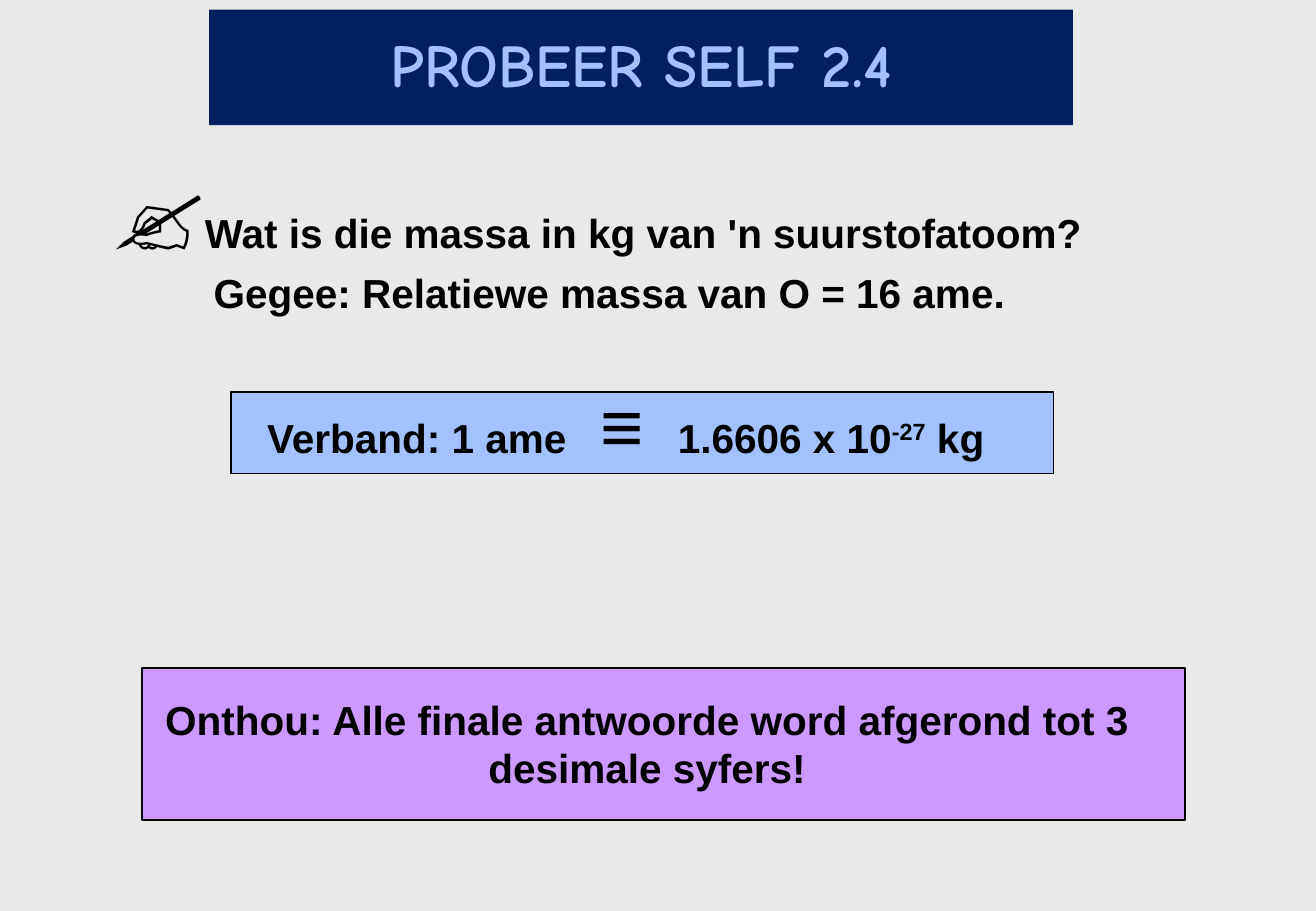
from lxml import etree
from pptx import Presentation
from pptx import util as u
from pptx.dml.color import RGBColor
from pptx.enum import shapes, text
from pptx.oxml import ns

BLACK = RGBColor(0x00, 0x00, 0x00)
PAPER = RGBColor(0xE9, 0xE9, 0xE9)
NAVY = RGBColor(0x00, 0x20, 0x60)
SKY = RGBColor(0xA2, 0xC1, 0xFE)
LILAC = RGBColor(0xCC, 0x99, 0xFF)

BODY = {"name": "Arial", "size": u.Pt(24), "bold": True}
TITLE = {"name": "Comic Neue", "size": u.Pt(36), "bold": True}
HAND = {"name": "Lato", "size": u.Pt(60)}
SIGN = {"size": u.Pt(44)}


class ExerciseSlide:
    def __init__(self, presentation):
        self.slide = presentation.slides.add_slide(presentation.slide_layouts[6])
        fill = self.slide.background.fill
        fill.solid()
        fill.fore_color.rgb = PAPER

    def panel(self, box, color, outlined=True):
        shape = self.slide.shapes.add_shape(
            shapes.MSO_SHAPE.RECTANGLE, *map(u.Inches, box))
        shape.shadow.inherit = False
        shape.fill.solid()
        shape.fill.fore_color.rgb = color
        if outlined:
            shape.line.color.rgb = BLACK
            shape.line.width = u.Pt(1)
        else:
            shape.line.fill.background()
        return shape

    def text_box(self, box):
        shape = self.slide.shapes.add_textbox(*map(u.Inches, box))
        shape.text_frame.word_wrap = True
        return shape.text_frame

    def add_text(self, paragraph, wording, color=BLACK, base=BODY, baseline=None, **changes):
        run = paragraph.add_run()
        run.text = wording
        for name, value in {**base, **changes}.items():
            setattr(run.font, name, value)
        run.font.color.rgb = color
        if baseline:
            run._r.get_or_add_rPr().set("baseline", str(baseline * 1000))

    def layout(self, paragraph, before=None, tabs=()):
        """Set the space before in percent and left tab stops in inches."""
        properties = paragraph._p.get_or_add_pPr()
        if before:
            space = etree.SubElement(properties, ns.qn("a:spcBef"))
            etree.SubElement(space, ns.qn("a:spcPct"), val=str(before * 1000))
        if tabs:
            stops = etree.SubElement(properties, ns.qn("a:tabLst"))
            for tab in tabs:
                etree.SubElement(stops, ns.qn("a:tab"), pos=str(u.Inches(tab)), algn="l")


def main():
    presentation = Presentation()
    presentation.slide_width = u.Inches(10.83)
    presentation.slide_height = u.Inches(7.5)
    page = ExerciseSlide(presentation)

    exercise = page.text_box((0.83, 1.16, 9.12, 1.92))
    question = exercise.paragraphs[0]
    page.add_text(question, "✍", **HAND)
    page.add_text(question, "Wat is die massa in kg van 'n suurstofatoom?")
    given = exercise.add_paragraph()
    given._p.get_or_add_pPr().set("marL", str(u.Inches(0.83)))
    page.add_text(given, "Gegee: Relatiewe massa van O = 16 ame.")

    page.panel((1.9, 3.23, 6.77, 0.67), SKY)
    relation = page.text_box((2.1, 3.07, 6.86, 0.84)).paragraphs[0]
    page.layout(relation, before=50, tabs=(2.74, 3.38))
    page.add_text(relation, "Verband: 1 ame\t")
    page.add_text(relation, "≡", **SIGN)
    page.add_text(relation, "\t1.6606 x 10")
    page.add_text(relation, "-27", baseline=30)
    page.add_text(relation, " kg")

    page.panel((1.17, 5.5, 8.58, 1.25), LILAC)
    reminder = page.text_box((1.17, 5.67, 8.31, 0.91)).paragraphs[0]
    reminder.alignment = text.PP_ALIGN.CENTER
    page.layout(reminder, before=50)
    page.add_text(reminder, "Onthou: Alle finale antwoorde word afgerond tot 3 desimale syfers!")

    banner = page.panel((1.72, 0.08, 7.11, 0.95), NAVY, outlined=False)
    banner.text_frame.vertical_anchor = text.MSO_ANCHOR.MIDDLE
    title = banner.text_frame.paragraphs[0]
    title.alignment = text.PP_ALIGN.CENTER
    title.line_spacing = 0.9
    page.add_text(title, "PROBEER SELF 2.4", SKY, TITLE)

    presentation.save("out.pptx")


if __name__ == "__main__":
    main()
